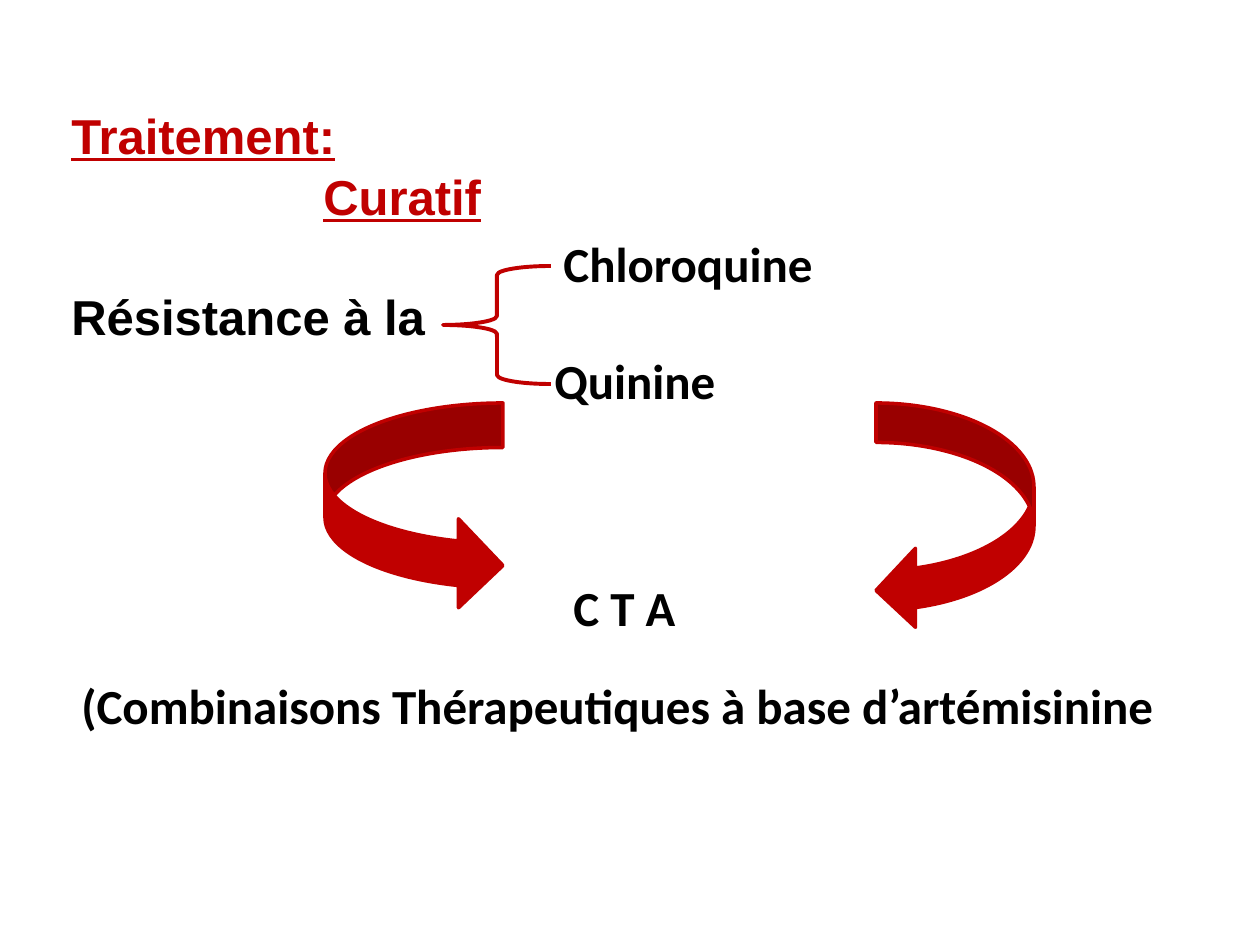
from dataclasses import dataclass
from typing import Optional

from pptx import Presentation
from pptx.dml.color import RGBColor
from pptx.enum.shapes import MSO_SHAPE as Shape
from pptx.enum.text import MSO_AUTO_SIZE as Fit
from pptx.util import Emu, Pt

PX = 914400 / 126
RED = RGBColor(0xC0, 0x00, 0x00)
BLACK = RGBColor(0x00, 0x00, 0x00)


@dataclass(frozen=True)
class Box:
    left: int
    top: int
    width: int
    height: int

    def emu(self) -> list[Emu]:
        return [px(n) for n in (self.left, self.top, self.width, self.height)]


@dataclass(frozen=True)
class Line:
    text: str
    font: str = "Calibri"
    color: RGBColor = BLACK
    under: bool = False
    indent: int = 0
    before: float = 0


@dataclass(frozen=True)
class Label:
    box: Box
    lines: tuple[Line, ...]


@dataclass(frozen=True)
class Mark:
    kind: Shape
    box: Box
    weight: float
    fill: Optional[RGBColor] = None


LABELS = (
    Label(Box(59, 99, 1260, 246), (
        Line("Traitement:", "Arial", RED, True),
        Line("Curatif", "Arial", RED, True, indent=252, before=1.3),
        Line("Résistance à la", "Arial", before=35.3),
    )),
    Label(Box(551, 227, 374, 72), (Line("Chloroquine"),)),
    Label(Box(542, 344, 374, 131), (Line("Quinine"),)),
    Label(Box(561, 571, 374, 72), (Line("C T A"),)),
    Label(Box(69, 669, 1221, 72),
          (Line("(Combinaisons Thérapeutiques à base d’artémisinine"),)),
)

MARKS = (
    Mark(Shape.LEFT_BRACE, Box(443, 266, 108, 118), 2.25),
    Mark(Shape.CURVED_RIGHT_ARROW, Box(325, 403, 178, 207), 2, RED),
    Mark(Shape.CURVED_LEFT_ARROW, Box(876, 403, 158, 227), 2, RED),
)


def px(count: int) -> Emu:
    return Emu(round(count * PX))


def add_label(slide, label: Label) -> None:
    frame = slide.shapes.add_textbox(*label.box.emu()).text_frame
    frame.word_wrap = True
    frame.auto_size = Fit.SHAPE_TO_FIT_TEXT
    for i, line in enumerate(label.lines):
        para = frame.add_paragraph() if i else frame.paragraphs[0]
        para.space_before = Pt(line.before)
        if line.indent:
            para._p.get_or_add_pPr().set("marL", str(px(line.indent)))
        run = para.add_run()
        run.text = line.text
        font = run.font
        font.name, font.size = line.font, Pt(28)
        font.bold, font.underline = True, line.under
        font.color.rgb = line.color


def add_mark(slide, mark: Mark) -> None:
    shape = slide.shapes.add_shape(mark.kind, *mark.box.emu())
    shape.shadow.inherit = False
    shape.line.color.rgb = RED
    shape.line.width = Pt(mark.weight)
    if mark.fill is None:
        shape.fill.background()
    else:
        shape.fill.solid()
        shape.fill.fore_color.rgb = mark.fill


def main() -> None:
    deck = Presentation()
    deck.slide_width, deck.slide_height = px(1260), px(945)
    slide = deck.slides.add_slide(deck.slide_layouts[6])
    for label in LABELS:
        add_label(slide, label)
    for mark in MARKS:
        add_mark(slide, mark)
    deck.save("out.pptx")


if __name__ == "__main__":
    main()
